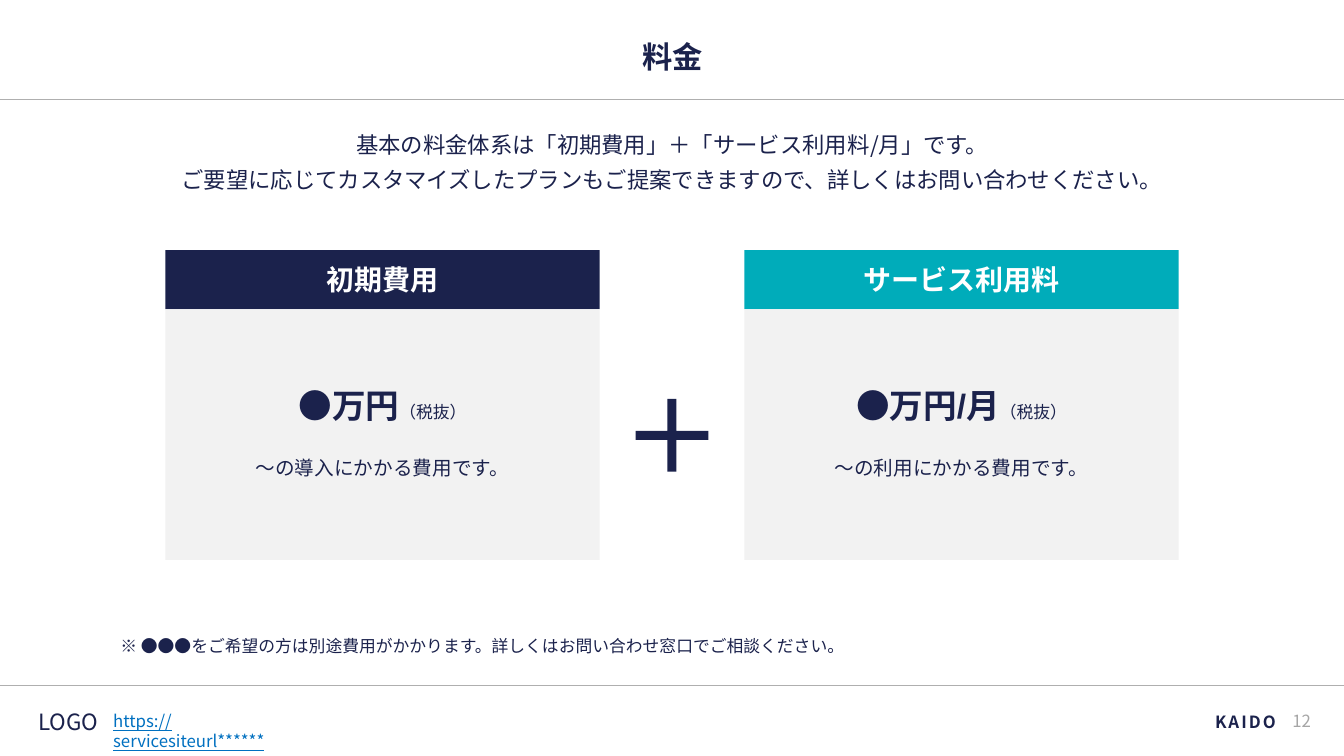
from lxml.etree import SubElement
from pptx import Presentation
from pptx.dml.color import RGBColor
from pptx.enum.shapes import MSO_CONNECTOR as Connector, MSO_SHAPE as Shape
from pptx.enum.text import MSO_ANCHOR as Anchor, MSO_AUTO_SIZE as AutoSize, PP_ALIGN as Align
from pptx.oxml.ns import qn
from pptx.util import Pt

COLORS = {
    "navy": "1B224C",
    "teal": "00ACBA",
    "panel": "F2F2F2",
    "rule": "AFAFAF",
    "link": "0070C0",
    "number": "A6A6A6",
    "white": "FFFFFF",
}
SANS = "Noto Sans CJK JP"
LATIN = "Arial"
WIDTH, HEIGHT = 960, 540


class SlideBuilder:
    def __init__(self, slide):
        self.slide = slide
        self.shapes = slide.shapes

    def color(self, name):
        return RGBColor.from_string(COLORS[name])

    def frame(self, shape, anchor=Anchor.TOP, insets=(3, 3, 3, 3), wrap=True):
        frame = shape.text_frame
        frame.auto_size = AutoSize.NONE
        frame.word_wrap = wrap
        frame.vertical_anchor = anchor
        frame.margin_left, frame.margin_top, frame.margin_right, frame.margin_bottom = map(Pt, insets)
        return frame

    def run(self, paragraph, text, size, color="navy", bold=False, font=SANS, underline=False, tracking=0):
        run = paragraph.add_run()
        run.text = text
        run.font.size = Pt(size)
        run.font.bold = bold
        run.font.name = font
        run.font.color.rgb = self.color(color)
        if underline:
            run.font.underline = True
        properties = run._r.get_or_add_rPr()
        SubElement(properties, qn("a:ea")).set("typeface", SANS)
        if tracking:
            properties.set("spc", str(int(tracking * 100)))

    def title(self, box, text):
        heading = self.shapes.title
        heading.left, heading.top, heading.width, heading.height = map(Pt, box)
        paragraph = self.frame(heading, Anchor.MIDDLE).paragraphs[0]
        paragraph.alignment = Align.CENTER
        paragraph.line_spacing = 0.9
        self.run(paragraph, text, 21.6, bold=True)

    def text(self, box, lines, size, align=Align.LEFT, anchor=Anchor.TOP, wrap=True,
             spacing=None, hanging=0, **style):
        frame = self.frame(self.shapes.add_textbox(*map(Pt, box)), anchor, wrap=wrap)
        for index, line in enumerate(lines):
            paragraph = frame.add_paragraph() if index else frame.paragraphs[0]
            paragraph.alignment = align
            if spacing:
                paragraph.line_spacing = spacing
            if hanging:
                properties = paragraph._p.get_or_add_pPr()
                properties.set("marL", str(Pt(hanging)))
                properties.set("indent", str(-Pt(hanging)))
            self.run(paragraph, line, size, **style)

    def block(self, box, fill, preset=Shape.RECTANGLE):
        block = self.shapes.add_shape(preset, *map(Pt, box))
        block.shadow.inherit = False
        block.fill.solid()
        block.fill.fore_color.rgb = self.color(fill)
        block.line.fill.background()
        return block

    def rule(self, top):
        rule = self.shapes.add_connector(Connector.STRAIGHT, 0, Pt(top), Pt(WIDTH), Pt(top))
        rule.line.color.rgb = self.color("rule")
        rule.line.width = Pt(0.5)
        SubElement(rule._element.spPr, qn("a:effectLst"))

    def plus(self, box):
        self.block(box, "navy", Shape.CROSS).adjustments[0] = 0.438

    def price_card(self, left, fill, heading, price, purpose):
        top, width, header_height, panel_height = 178.6, 310.2, 42.3, 179
        header = self.block((left, top, width, header_height), fill)
        paragraph = self.frame(header, Anchor.MIDDLE).paragraphs[0]
        paragraph.alignment = Align.CENTER
        self.run(paragraph, heading, 20, "white", bold=True)

        panel = self.block((left, top + header_height, width, panel_height), "panel")
        frame = self.frame(panel, Anchor.MIDDLE, (8.5, 8.5, 8.5, 11.5))
        amount, description = frame.paragraphs[0], frame.add_paragraph()
        for paragraph, gap in ((amount, 22), (description, 4)):
            paragraph.alignment = Align.CENTER
            paragraph.space_after = Pt(gap)
        self.run(amount, price, 24, bold=True, font=LATIN)
        self.run(amount, "（税抜）", 12, font=LATIN)
        self.run(description, purpose, 14, font=LATIN)


def main():
    deck = Presentation()
    deck.slide_width, deck.slide_height = Pt(WIDTH), Pt(HEIGHT)
    page = SlideBuilder(deck.slides.add_slide(deck.slide_layouts[5]))

    for top in (70.8, 489.6):
        page.rule(top)
    page.title((47.5, 28, 865.4, 28), "料金")
    page.text((47.5, 85, 865.4, 45.4), [
        "基本の料金体系は「初期費用」＋「サービス利用料/月」です。",
        "ご要望に応じてカスタマイズしたプランもご提案できますので、詳しくはお問い合わせください。",
    ], 16, Align.CENTER, spacing=1.3, hanging=18)

    page.price_card(118.1, "navy", "初期費用", "●万円", "〜の導入にかかる費用です。")
    page.plus((454, 285, 52, 52))
    page.price_card(531.7, "teal", "サービス利用料", "●万円/月", "〜の利用にかかる費用です。")
    page.text((83, 451.4, 793.4, 23), [
        "※ ●●●をご希望の方は別途費用がかかります。詳しくはお問い合わせ窓口でご相談ください。",
    ], 12, font=LATIN)

    page.text((18.7, 501.1, 59.8, 28), ["LOGO"], 16, Align.CENTER, Anchor.MIDDLE, wrap=False)
    page.text((77.8, 504.7, 150.5, 20.2), ["https://servicesiteurl******"], 12,
              color="link", underline=True)
    page.text((744.5, 501.1, 170, 28.8), ["KAIDO"], 12, Align.RIGHT, Anchor.MIDDLE,
              bold=True, tracking=1.5)
    page.text((915.8, 501.1, 28, 28), ["12"], 12, Align.CENTER, Anchor.MIDDLE,
              wrap=False, color="number")
    deck.save("out.pptx")


if __name__ == "__main__":
    main()
